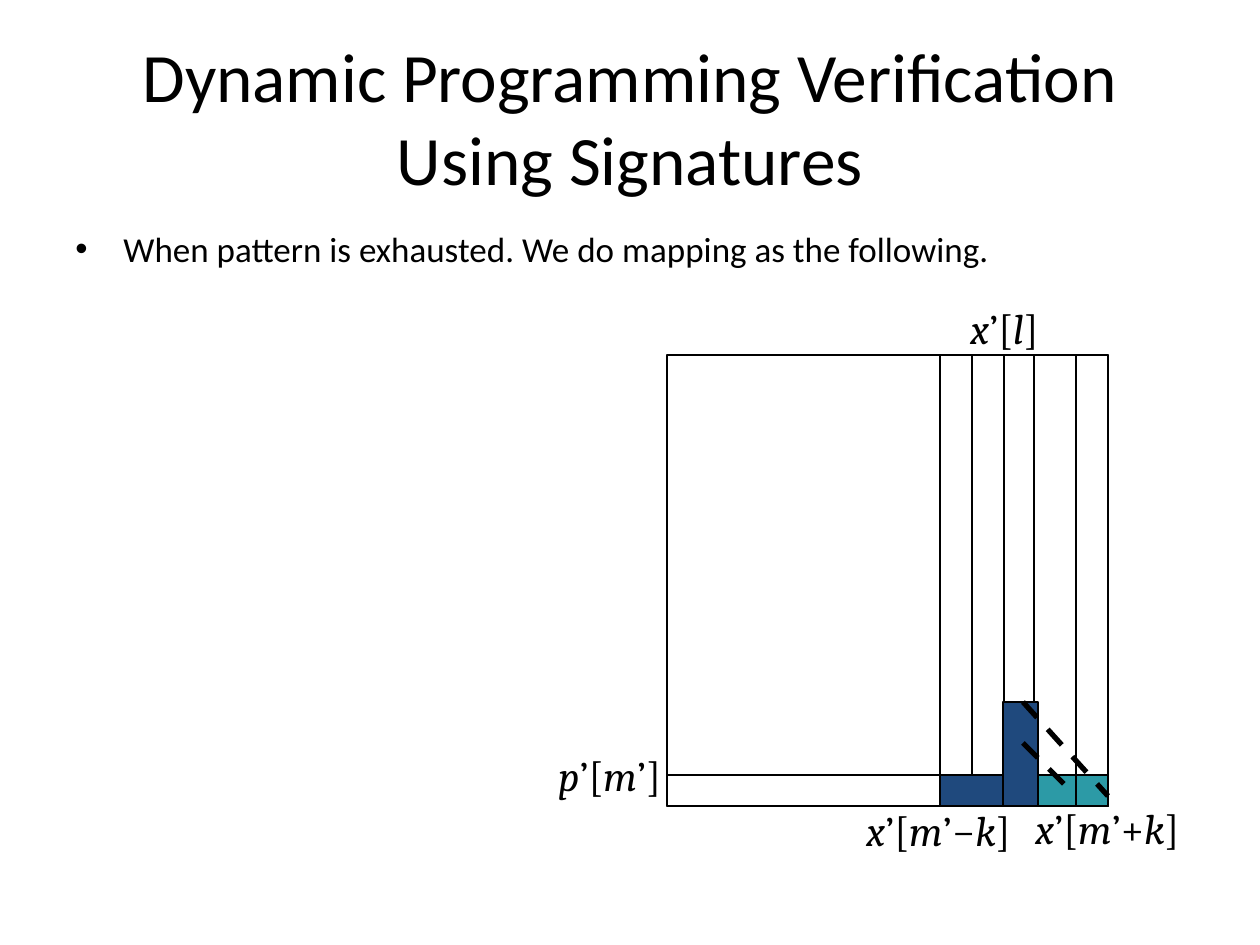
from itertools import groupby

from lxml import etree
from pptx import Presentation, util as u
from pptx.dml.color import RGBColor
from pptx.enum import dml, shapes, text
from pptx.oxml.ns import qn

PX = 914400 / 126
BLACK = RGBColor(0x00, 0x00, 0x00)
NAVY = RGBColor(0x1F, 0x49, 0x7D)
TEAL = RGBColor(0x2C, 0x9A, 0xA6)

TITLE = "Dynamic Programming Verification Using Signatures"
BULLET = "When pattern is exhausted. We do mapping as the following."

# Dynamic programming matrix and the edges inside it
LEFT, TOP, RIGHT, BOTTOM = 667, 355, 1108, 806
ROW_TOP = 775          # last pattern row
BAND_LEFT = 940        # first column of the x'[m'-k] .. x'[m'+k] band
PEAK_LEFT, PEAK_RIGHT, PEAK_TOP = 1003, 1038, 702
COLUMN = 32

# left, top, right, bottom, fill; from back to front
CELLS_BEHIND = [
    (LEFT, ROW_TOP, RIGHT, BOTTOM, None),
    (BAND_LEFT, ROW_TOP, RIGHT, BOTTOM, TEAL),
    (BAND_LEFT, TOP, BAND_LEFT + COLUMN, BOTTOM, None),
    (PEAK_LEFT, PEAK_TOP, PEAK_RIGHT, BOTTOM, NAVY),
    (RIGHT - COLUMN, TOP, RIGHT, BOTTOM, None),
]
CELLS_IN_FRONT = [
    (BAND_LEFT, ROW_TOP, PEAK_LEFT, BOTTOM, NAVY),
    (LEFT, TOP, RIGHT, BOTTOM, None),
    (1004, TOP, 1034, PEAK_TOP, None),
]
DIAGONALS = [
    (1023, PEAK_TOP, RIGHT, 796),
    (1023, 743, 1066, 786),
]
# text, left, top, width; letters are set in italics
LABELS = [
    ("p’[m’]", 546, 743, 141),
    ("x’[m’−k]", 854, 798, 184),
    ("x’[m’+k]", 1023, 796, 189),
    ("x’[l]", 958, 296, 126),
]
LABEL_HEIGHT = 64


def px(*lengths):
    return [u.Emu(round(length * PX)) for length in lengths]


def style(font, name, size):
    font.name, font.size = name, u.Pt(size)
    font.color.rgb = BLACK


def add_text(slide, left, top, width, height):
    box = slide.shapes.add_textbox(*px(left, top, width, height))
    box.text_frame.word_wrap = True
    return box.text_frame


def add_title(slide):
    frame = add_text(slide, 63, 38, 1134, 157)
    frame.vertical_anchor = text.MSO_ANCHOR.MIDDLE
    frame.text = TITLE
    frame.paragraphs[0].alignment = text.PP_ALIGN.CENTER
    style(frame.paragraphs[0].runs[0].font, "Calibri", 39.6)


def add_bullet(slide):
    frame = add_text(slide, 63, 221, 1134, 623)
    frame.text = BULLET
    paragraph = frame.paragraphs[0]
    properties = paragraph._p.get_or_add_pPr()
    indent = px(48)[0]
    properties.set("marL", str(indent))
    properties.set("indent", str(-indent))
    etree.SubElement(properties, qn("a:buFont"), typeface="Arial")
    etree.SubElement(properties, qn("a:buChar"), char="•")
    style(paragraph.runs[0].font, "Calibri", 20)


def add_cell(slide, left, top, right, bottom, fill):
    cell = slide.shapes.add_shape(
        shapes.MSO_SHAPE.RECTANGLE, *px(left, top, right - left, bottom - top))
    cell.shadow.inherit = False
    if fill is None:
        cell.fill.background()
    else:
        cell.fill.solid()
        cell.fill.fore_color.rgb = fill
    cell.line.color.rgb = BLACK
    cell.line.width = u.Pt(0.75)


def add_diagonal(slide, ends):
    diagonal = slide.shapes.add_connector(shapes.MSO_CONNECTOR.STRAIGHT, *px(*ends))
    diagonal.line.color.rgb = BLACK
    diagonal.line.width = u.Pt(3)
    diagonal.line.dash_style = dml.MSO_LINE.DASH
    etree.SubElement(diagonal._element.spPr, qn("a:effectLst"))


def add_label(slide, label, left, top, width):
    frame = add_text(slide, left, top, width, LABEL_HEIGHT)
    frame.auto_size = text.MSO_AUTO_SIZE.SHAPE_TO_FIT_TEXT
    for is_letter, part in groupby(label, str.isalpha):
        run = frame.paragraphs[0].add_run()
        run.text = "".join(part)
        style(run.font, "Cambria", 24)
        run.font.italic = is_letter


def main():
    deck = Presentation()
    deck.slide_width, deck.slide_height = px(1260, 945)
    slide = deck.slides.add_slide(deck.slide_layouts[6])
    add_title(slide)
    add_bullet(slide)
    for cell in CELLS_BEHIND:
        add_cell(slide, *cell)
    for ends in DIAGONALS:
        add_diagonal(slide, ends)
    for cell in CELLS_IN_FRONT:
        add_cell(slide, *cell)
    for label in LABELS:
        add_label(slide, *label)
    deck.save("out.pptx")


if __name__ == "__main__":
    main()
